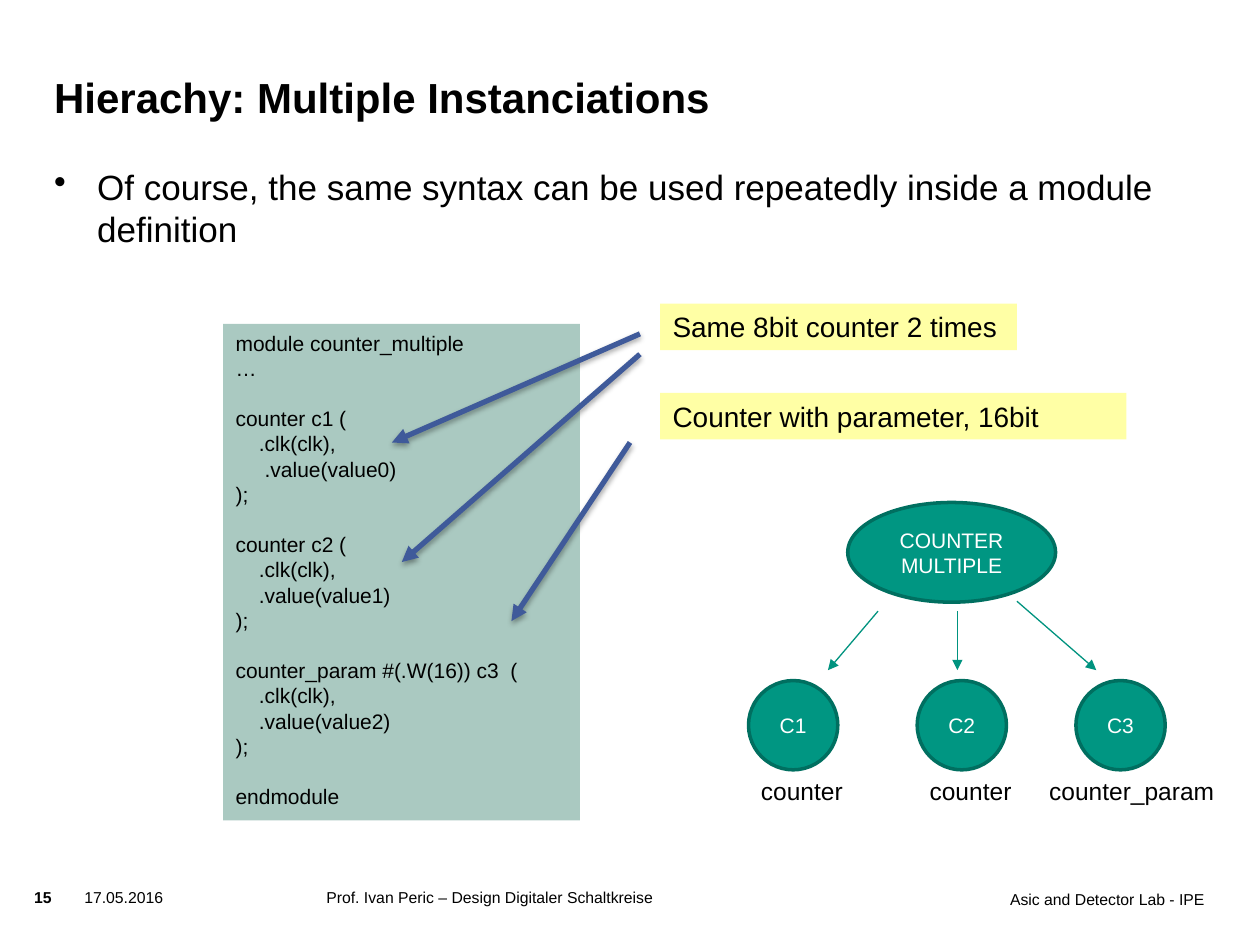
from lxml import etree
from pptx import Presentation
from pptx import util as u
from pptx.dml.color import RGBColor
from pptx.enum import shapes, text
from pptx.oxml import ns

COLORS = {
    "ink": "000000", "white": "FFFFFF", "code": "AAC9C1", "note": "FFFF99",
    "node": "009682", "node_edge": "006F60", "branch": "00937F", "pointer": "3F5A9A",
}

CODE_BLOCKS = [
    ["module counter_multiple", "…"],
    ["counter c1 (", "    .clk(clk),", "     .value(value0)", ");"],
    ["counter c2 (", "    .clk(clk),", "    .value(value1)", ");"],
    ["counter_param #(.W(16)) c3  (", "    .clk(clk),", "    .value(value2)", ");"],
    ["endmodule"],
]


def child(parent, tag, **attributes):
    """Append a drawing element with the given attributes."""
    return etree.SubElement(parent, ns.qn(tag), {k: str(v) for k, v in attributes.items()})


class SlideBuilder:
    """Hold the style and the current slide, and draw each kind of element."""

    font = "Arial"

    def __init__(self, deck):
        """Add a title-only slide to the deck."""
        self.page = deck.slides.add_slide(deck.slide_layouts[5])

    def color(self, name):
        """Return a named colour."""
        return RGBColor.from_string(COLORS[name])

    def style(self, para, size, color="ink", bold=False, align=text.PP_ALIGN.LEFT):
        """Format a whole paragraph."""
        para.alignment = align
        para.font.name = self.font
        para.font.size = u.Pt(size)
        para.font.bold = bold
        para.font.color.rgb = self.color(color)

    def flush(self, frame):
        """Remove the inner margins of a text frame."""
        frame.margin_left = frame.margin_right = frame.margin_top = frame.margin_bottom = 0

    def title(self, words, left, top, width, height):
        """Place and format the title placeholder."""
        box = self.page.shapes.title
        box.left, box.top, box.width, box.height = map(u.Cm, (left, top, width, height))
        frame = box.text_frame
        frame.text = words
        frame.auto_size = text.MSO_AUTO_SIZE.NONE
        frame.vertical_anchor = text.MSO_ANCHOR.BOTTOM
        self.flush(frame)
        self.style(frame.paragraphs[0], 24, bold=True)

    def label(self, words, left, top, width, height, size=9, wrap=True, flush=True, **style):
        """Add a one-paragraph text box and return the paragraph."""
        box = self.page.shapes.add_textbox(*map(u.Cm, (left, top, width, height)))
        frame = box.text_frame
        frame.word_wrap = wrap
        if flush:
            self.flush(frame)
        para = frame.paragraphs[0]
        para.text = words
        self.style(para, size, **style)
        return para

    def bullet(self, words, left, top, width, height):
        """Add a bulleted paragraph with a hanging indent."""
        para = self.label(words, left, top, width, height, size=20)
        props = para._p.get_or_add_pPr()
        props.set("marL", str(u.Cm(0.87)))
        props.set("indent", str(-u.Cm(0.87)))
        mark = child(props, "a:buChar", char="•")
        props.insert(0, mark)

    def shape(self, kind, fill, left, top, width, height, edge=None):
        """Add a filled shape and return it."""
        box = self.page.shapes.add_shape(kind, *map(u.Cm, (left, top, width, height)))
        box.shadow.inherit = False
        box.fill.solid()
        box.fill.fore_color.rgb = self.color(fill)
        if edge:
            box.line.color.rgb = self.color(edge)
            box.line.width = u.Pt(2)
        else:
            box.line.fill.background()
        return box

    def code(self, blocks, left, top, width, height):
        """Add a code panel whose blocks are one line apart."""
        box = self.shape(shapes.MSO_SHAPE.RECTANGLE, "code", left, top, width, height)
        frame = box.text_frame
        frame.vertical_anchor = text.MSO_ANCHOR.TOP
        para = frame.paragraphs[0]
        for number, block in enumerate(blocks):
            for row, line in enumerate(block):
                if number or row:
                    para = frame.add_paragraph()
                para.text = line
                self.style(para, 12)
                if number and row == 0:
                    para.space_before = u.Pt(14.4)

    def note(self, words, left, top, width, height):
        """Add a slightly transparent note."""
        box = self.shape(shapes.MSO_SHAPE.RECTANGLE, "note", left, top, width, height)
        child(box.fill._xPr.find(".//" + ns.qn("a:srgbClr")), "a:alpha", val=88000)
        frame = box.text_frame
        frame.vertical_anchor = text.MSO_ANCHOR.TOP
        frame.text = words
        self.style(frame.paragraphs[0], 16)

    def node(self, words, left, top, width, height):
        """Add an oval of the hierarchy tree."""
        box = self.shape(shapes.MSO_SHAPE.OVAL, "node", left, top, width, height, "node_edge")
        box.text_frame.text = words
        self.style(box.text_frame.paragraphs[0], 12, "white", align=text.PP_ALIGN.CENTER)

    def arrow(self, start, end, color, weight, shadow=False):
        """Add a straight arrow, with a soft shadow if wanted."""
        line = self.page.shapes.add_connector(
            shapes.MSO_CONNECTOR.STRAIGHT, *map(u.Cm, (*start, *end)))
        line.line.color.rgb = self.color(color)
        line.line.width = u.Pt(weight)
        child(line.line._get_or_add_ln(), "a:tailEnd", type="triangle")
        effects = child(line._element.spPr, "a:effectLst")
        if shadow:
            outer = child(effects, "a:outerShdw", blurRad=u.Pt(3.1), dist=u.Pt(1.8),
                          dir=5400000, rotWithShape=0)
            child(child(outer, "a:srgbClr", val=COLORS["ink"]), "a:alpha", val=35000)


def main():
    """Build the slide and save it."""
    deck = Presentation()
    deck.slide_width, deck.slide_height = u.Cm(25.4), u.Cm(19.05)
    slide = SlideBuilder(deck)

    slide.label("Asic and Detector Lab - IPE", 16.69, 17.93, 7.59, 0.99, align=text.PP_ALIGN.RIGHT)
    slide.label("15", 0.69, 17.9, 0.91, 0.61, bold=True)
    slide.label("17.05.2016", 1.7, 17.9, 2.39, 0.99)
    slide.label("Prof. Ivan Peric – Design Digitaler Schaltkreise", 6.58, 17.9, 7.59, 0.99)

    slide.title("Hierachy: Multiple Instanciations", 1.09, 0.91, 19.2, 1.55)
    slide.bullet("Of course, the same syntax can be used repeatedly inside a module definition",
                 1.09, 3.33, 23.22, 13.59)

    slide.code(CODE_BLOCKS, 4.5, 6.53, 7.19, 10.01)
    slide.note("Same 8bit counter 2 times", 13.31, 6.12, 7.19, 0.94)
    slide.note("Counter with parameter, 16bit", 13.31, 7.92, 9.4, 0.94)
    for start, end in [((12.9, 6.73), (7.9, 8.92)), ((12.9, 7.14), (8.1, 11.33)),
                       ((12.7, 8.92), (10.31, 12.52))]:
        slide.arrow(start, end, "pointer", 3, shadow=True)

    slide.node("COUNTER MULTIPLE", 17.09, 10.13, 4.19, 2.01)
    for start, end in [((17.7, 12.32), (16.69, 13.51)), ((19.3, 12.32), (19.3, 13.51)),
                       ((20.5, 12.12), (22.1, 13.51))]:
        slide.arrow(start, end, "branch", 0.75)
    for name, left, module, module_left, width in [
            ("C1", 15.09, "counter", 15.09, 2.16),
            ("C2", 18.49, "counter", 18.49, 2.16),
            ("C3", 21.69, "counter_param", 20.9, 3.86)]:
        slide.node(name, left, 13.72, 1.8, 1.8)
        slide.label(module, module_left, 15.52, width, 0.86, size=14, wrap=False, flush=False)

    deck.save("out.pptx")


if __name__ == "__main__":
    main()
